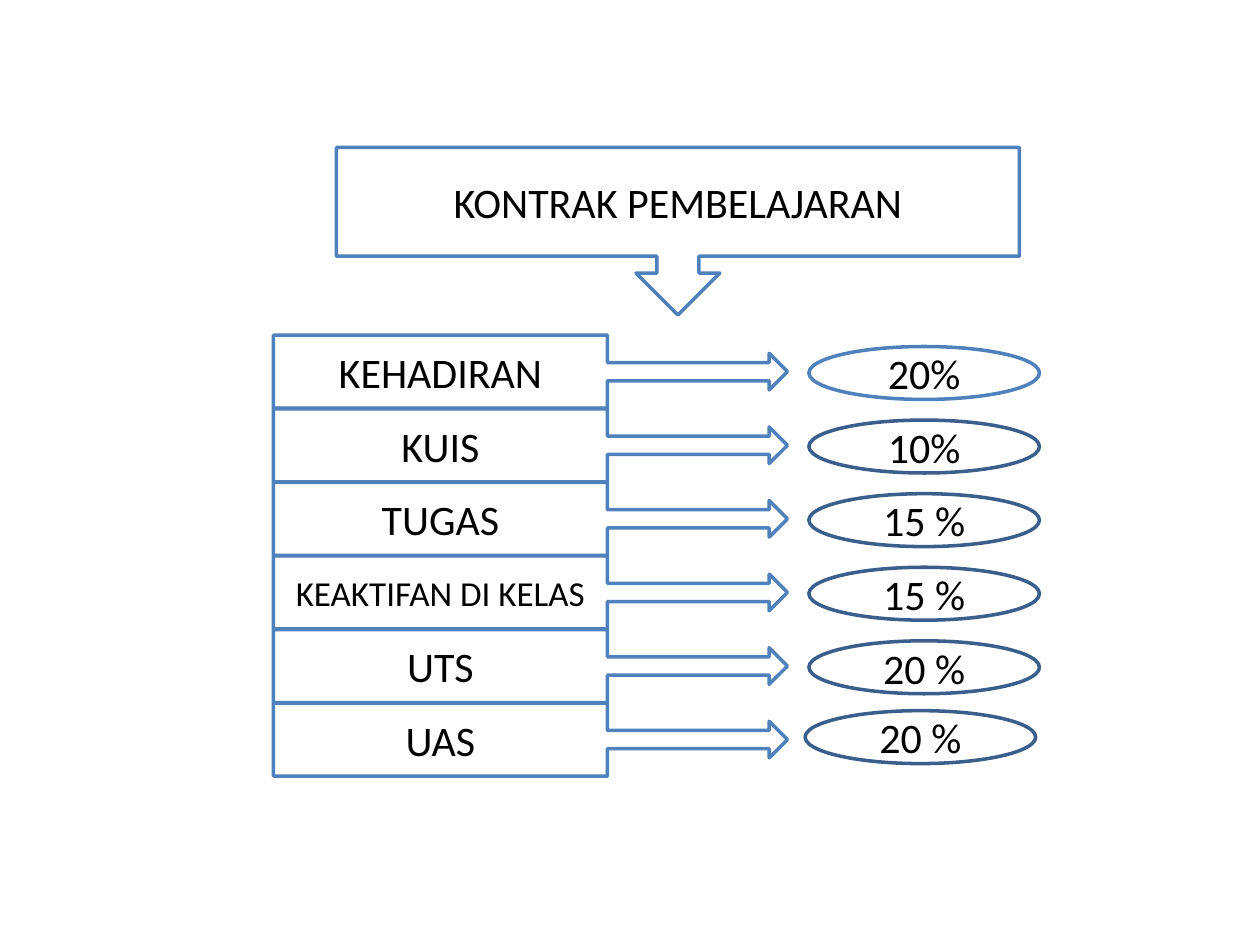
from pptx import Presentation
from pptx.dml.color import RGBColor
from pptx.enum.shapes import MSO_SHAPE
from pptx.enum.text import MSO_ANCHOR, PP_ALIGN
from pptx.util import Inches, Pt

COLORS = {"blue": "4F81BD", "navy": "3A5F8C", "white": "FFFFFF", "black": "000000"}
ROWS = [
    ("KEHADIRAN", "20%"),
    ("KUIS", "10%"),
    ("TUGAS", "15 %"),
    ("KEAKTIFAN DI KELAS", "15 %"),
    ("UTS", "20 %"),
    ("UAS", "20 %"),
]
TOP, PITCH = 2.66, 0.584


def rgb(name):
    return RGBColor.from_string(COLORS[name])


def write(tf, text, size=24, font="Calibri", color="black", align=PP_ALIGN.CENTER):
    tf.word_wrap = True
    tf.vertical_anchor = MSO_ANCHOR.MIDDLE
    p = tf.paragraphs[0]
    p.alignment = align
    r = p.add_run()
    r.text = text
    r.font.size = Pt(size)
    r.font.name = font
    r.font.color.rgb = rgb(color)


class Deck:
    def __init__(self, s, line_width=2):
        self.s = s
        self.line_width = line_width

    def shape(self, kind, box, text, line="blue", fill=None, size=24):
        sp = self.s.shapes.add_shape(kind, *[Inches(v) for v in box])
        sp.shadow.inherit = False
        if fill:
            sp.fill.solid()
            sp.fill.fore_color.rgb = rgb(fill)
        else:
            sp.fill.background()
        sp.line.color.rgb = rgb(line)
        sp.line.width = Pt(self.line_width)
        write(sp.text_frame, text, size=size)

    def title(self, text):
        self.shape(MSO_SHAPE.DOWN_ARROW_CALLOUT, (2.67, 1.17, 5.42, 1.33), text)

    def item(self, top, text, size):
        self.shape(MSO_SHAPE.RIGHT_ARROW_CALLOUT, (2.17, top, 4.08, 0.58), text, size=size)

    def weight(self, left, top, text, line):
        self.shape(MSO_SHAPE.OVAL, (left, top, 1.83, 0.42), text, line=line, fill="white")


def main():
    prs = Presentation()
    prs.slide_width, prs.slide_height = Inches(10), Inches(7.5)
    deck = Deck(prs.slides.add_slide(prs.slide_layouts[6]))
    deck.title("KONTRAK PEMBELAJARAN")
    last = len(ROWS) - 1
    for i, (name, share) in enumerate(ROWS):
        top = TOP + i * PITCH
        deck.item(top, name, 20 if len(name) > 12 else 24)
        left, oval_top = (6.39, 5.64) if i == last else (6.42, top + 0.09)
        deck.weight(left, oval_top, share, "navy" if i else "blue")
    prs.save("out.pptx")


if __name__ == "__main__":
    main()
